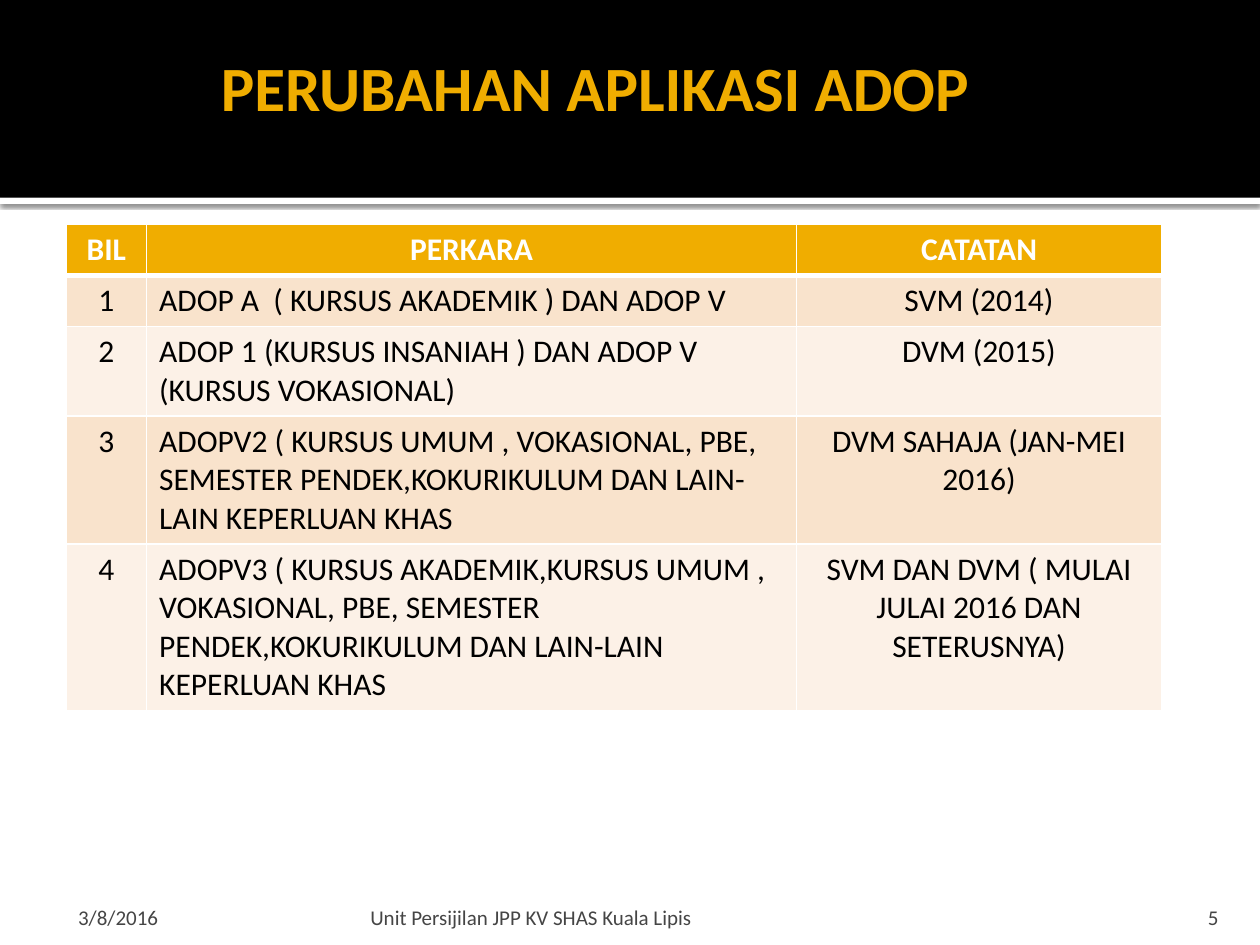
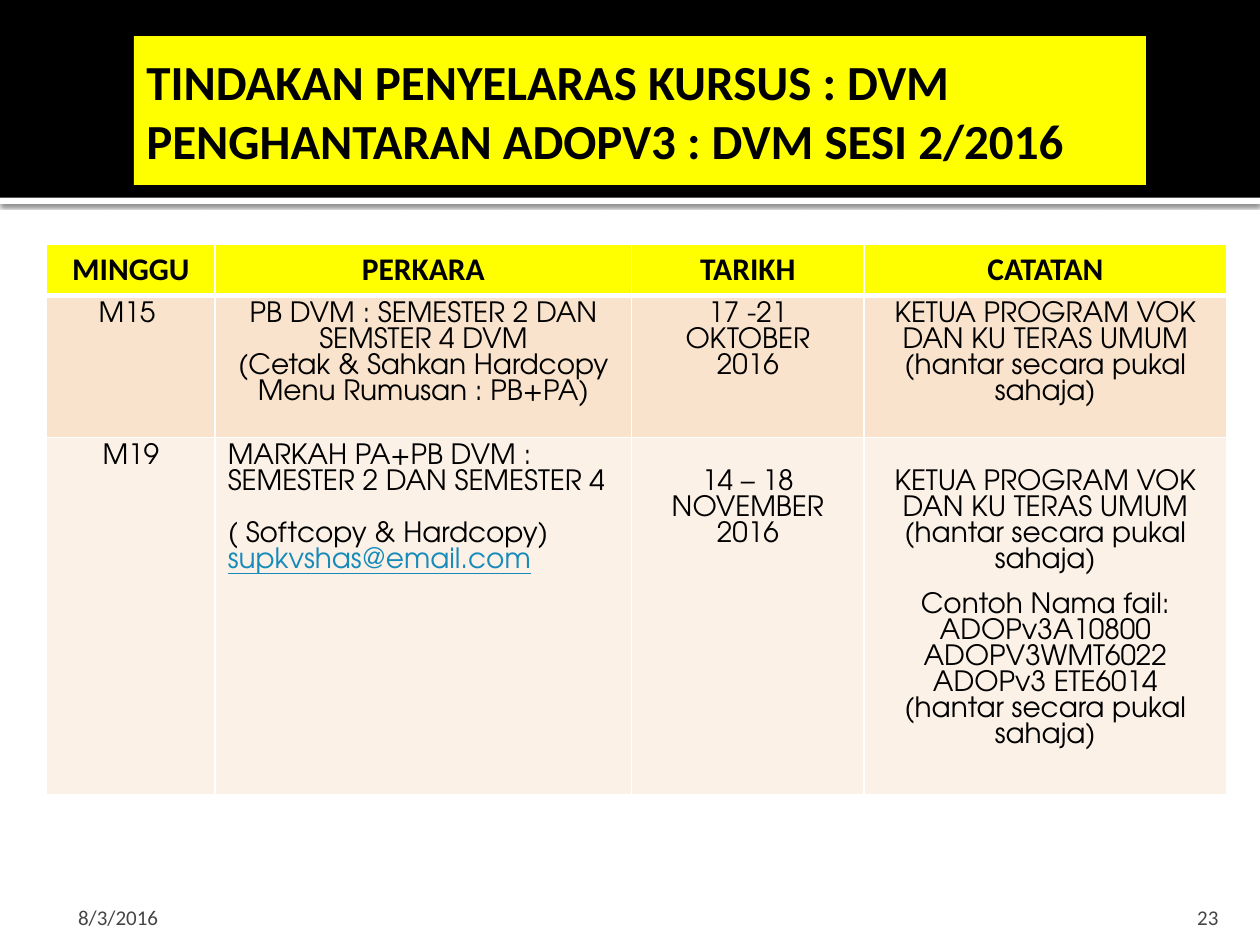
from lxml.etree import SubElement
from pptx import Presentation
from pptx.dml.color import RGBColor
from pptx.enum.shapes import MSO_SHAPE
from pptx.enum.text import MSO_ANCHOR as Anchor, PP_ALIGN as Align
from pptx.oxml.ns import qn
from pptx.util import Pt

COLORS = {
    "black": "000000", "white": "FFFFFF", "amber": "F0AD00", "yellow": "FFFF00",
    "grey": "454545", "band": "F9E3CC", "pale": "FCF1E7", "link": "168BBA",
}
TIGHT = 14.9
TITLE_INSETS = (7.2, 3.6, 3.6, 3.6)


def left(text, **options):
    return text, {"align": Align.LEFT, **options}


class Deck:
    """Holds the shared style and the current slide, and draws each kind of element."""

    def __init__(self):
        self.presentation = Presentation()
        self.presentation.slide_width = Pt(720)
        self.presentation.slide_height = Pt(540)
        self.slide = None

    def color(self, name):
        return RGBColor.from_string(COLORS[name])

    def add_slide(self, date, number):
        self.slide = self.presentation.slides.add_slide(self.presentation.slide_layouts[6])
        strip = self.rectangle(0, 113, 720, 3.6, "white")
        self.drop_shadow(strip)
        self.rectangle(0, 0, 720, 113, "black")
        self.footer(36, 168, date, 8.64)
        self.footer(645.8, 57.6, number, 7.2, 7.2, Align.RIGHT)

    def rectangle(self, x, y, width, height, fill):
        shape = self.slide.shapes.add_shape(
            MSO_SHAPE.RECTANGLE, Pt(x), Pt(y), Pt(width), Pt(height))
        shape.shadow.inherit = False
        shape.fill.solid()
        shape.fill.fore_color.rgb = self.color(fill)
        shape.line.fill.background()
        return shape

    def drop_shadow(self, shape):
        effects = shape._element.spPr.find(qn("a:effectLst"))
        shadow = SubElement(effects, qn("a:outerShdw"), blurRad=str(Pt(2.5)),
                            dist=str(Pt(0.8)), dir="5400000", rotWithShape="0")
        tint = SubElement(shadow, qn("a:srgbClr"), val=COLORS["black"])
        SubElement(tint, qn("a:alpha"), val="60000")

    def add_paragraphs(self, frame, paragraphs, size, color, bold=False, font="Calibri",
                       align=Align.LEFT, spacing=None):
        for index, item in enumerate(paragraphs):
            text, options = (item, {}) if isinstance(item, str) else item
            paragraph = frame.add_paragraph() if index else frame.paragraphs[0]
            paragraph.alignment = options.get("align", align)
            if spacing:
                paragraph.line_spacing = Pt(spacing)
            if "gap" in options:
                paragraph.space_before = Pt(options["gap"])
            run = paragraph.add_run()
            run.text = text
            run.font.name = font
            run.font.size = Pt(size)
            run.font.bold = bold
            run.font.underline = options.get("underline", False)
            run.font.color.rgb = self.color(options.get("color", color))

    def text(self, x, y, width, height, text, anchor, insets, fill=None, **style):
        if fill:
            shape = self.rectangle(x, y, width, height, fill)
        else:
            shape = self.slide.shapes.add_textbox(Pt(x), Pt(y), Pt(width), Pt(height))
        frame = shape.text_frame
        frame.word_wrap = True
        frame.vertical_anchor = anchor
        (frame.margin_left, frame.margin_top,
         frame.margin_right, frame.margin_bottom) = map(Pt, insets)
        self.add_paragraphs(frame, [text], **style)

    def title(self, x, y, width, height, text, size, color, **style):
        self.text(x, y, width, height, text, Anchor.MIDDLE, TITLE_INSETS,
                  size=size, color=color, bold=True, **style)

    def footer(self, x, width, text, inset_left=3.6, inset_right=3.6, align=Align.LEFT):
        self.text(x, 509.8, width, 21.6, text, Anchor.BOTTOM,
                  (inset_left, 3.6, inset_right, 0), size=12, color="grey", align=align)

    def borders(self, cell, top, bottom):
        properties = cell._tc.get_or_add_tcPr()
        for side, width in zip("LRTB", (1, 1, top, bottom)):
            line = SubElement(properties, qn(f"a:ln{side}"), w=str(Pt(width)))
            fill = SubElement(line, qn("a:solidFill"))
            SubElement(fill, qn("a:srgbClr"), val=COLORS["white"])

    def table(self, x, y, widths, heights, header, rows, header_fill, header_color, **body):
        table = self.slide.shapes.add_table(
            len(heights), len(widths), Pt(x), Pt(y), Pt(sum(widths)), Pt(sum(heights))).table
        for column, width in zip(table.columns, widths):
            column.width = Pt(width)
        for row, height in zip(table.rows, heights):
            row.height = Pt(height)
        for r, contents in enumerate([header, *rows]):
            for c, content in enumerate(contents):
                cell = table.cell(r, c)
                self.borders(cell, 3 if r == 1 else 1, 3 if r == 0 else 1)
                cell.fill.solid()
                fill = ("pale", "band")[r % 2] if r else header_fill
                cell.fill.fore_color.rgb = self.color(fill)
                style = body if r else {"size": 18, "color": header_color, "bold": True}
                paragraphs = content if isinstance(content, list) else [content]
                self.add_paragraphs(cell.text_frame, paragraphs, align=Align.CENTER, **style)
        return table


def add_changes_slide(deck):
    deck.add_slide("3/8/2016", "5")
    deck.title(14.4, 0, 648, 98.6, "PERUBAHAN APLIKASI ADOP", 36, "amber",
               align=Align.CENTER)
    deck.footer(208, 433.4, "Unit Persijilan JPP KV SHAS Kuala Lipis")
    changes = [
        ("ADOP A  ( KURSUS AKADEMIK ) DAN ADOP V", "SVM (2014)"),
        ("ADOP 1 (KURSUS INSANIAH ) DAN ADOP V (KURSUS VOKASIONAL)", "DVM (2015)"),
        ("ADOPV2 ( KURSUS UMUM , VOKASIONAL, PBE, SEMESTER PENDEK,KOKURIKULUM "
         "DAN LAIN-LAIN KEPERLUAN KHAS", "DVM SAHAJA (JAN-MEI 2016)"),
        ("ADOPV3 ( KURSUS AKADEMIK,KURSUS UMUM , VOKASIONAL, PBE, SEMESTER "
         "PENDEK,KOKURIKULUM DAN LAIN-LAIN KEPERLUAN KHAS",
         "SVM DAN DVM ( MULAI JULAI 2016 DAN SETERUSNYA)"),
    ]
    rows = [(str(number), left(matter), note)
            for number, (matter, note) in enumerate(changes, 1)]
    deck.table(37.8, 128.2, (46, 371.4, 208.6), (29.2, 29.2, 51.2, 73.2, 95),
               ("BIL", "PERKARA", "CATATAN"), rows, "amber", "white",
               size=18, color="black")


def add_coordinator_slide(deck):
    deck.add_slide("8/3/2016", "23")
    deck.title(76.6, 20.6, 578.2, 85, "TINDAKAN PENYELARAS KURSUS : DVM "
               "PENGHANTARAN ADOPV3 : DVM SESI 2/2016", 28, "black", fill="yellow")
    submit = "(hantar secara pukal sahaja)"
    heads = ["KETUA PROGRAM VOK DAN KU TERAS UMUM", submit]
    rows = [
        ("M15 ",
         ["PB DVM : SEMESTER 2 DAN SEMSTER 4 DVM",
          "(Cetak & Sahkan Hardcopy Menu Rumusan : PB+PA)"],
         ["17 -21 OKTOBER", "2016"], heads),
        ("M19",
         [left("MARKAH PA+PB DVM : SEMESTER 2 DAN SEMESTER 4"),
          left("( Softcopy & Hardcopy)", gap=TIGHT),
          left("supkvshas@email.com", color="link", underline=True)],
         "14 – 18 NOVEMBER 2016",
         [*heads, ("Contoh Nama fail:", {"gap": 10.5}), "ADOPv3A10800",
          "ADOPV3WMT6022", "ADOPv3 ETE6014", submit]),
    ]
    table = deck.table(26.6, 139.7, (96.4, 238, 132.8, 207.2), (29.2, 81.2, 204),
                       ("MINGGU", "PERKARA", "TARIKH", "CATATAN"), rows,
                       "yellow", "black", size=16, color="black",
                       font="TeX Gyre Adventor", spacing=TIGHT)
    for column in (2, 3):
        table.cell(2, column).margin_top = Pt(3.6 + TIGHT)


def main():
    deck = Deck()
    add_changes_slide(deck)
    add_coordinator_slide(deck)
    deck.presentation.save("out.pptx")


if __name__ == "__main__":
    main()
